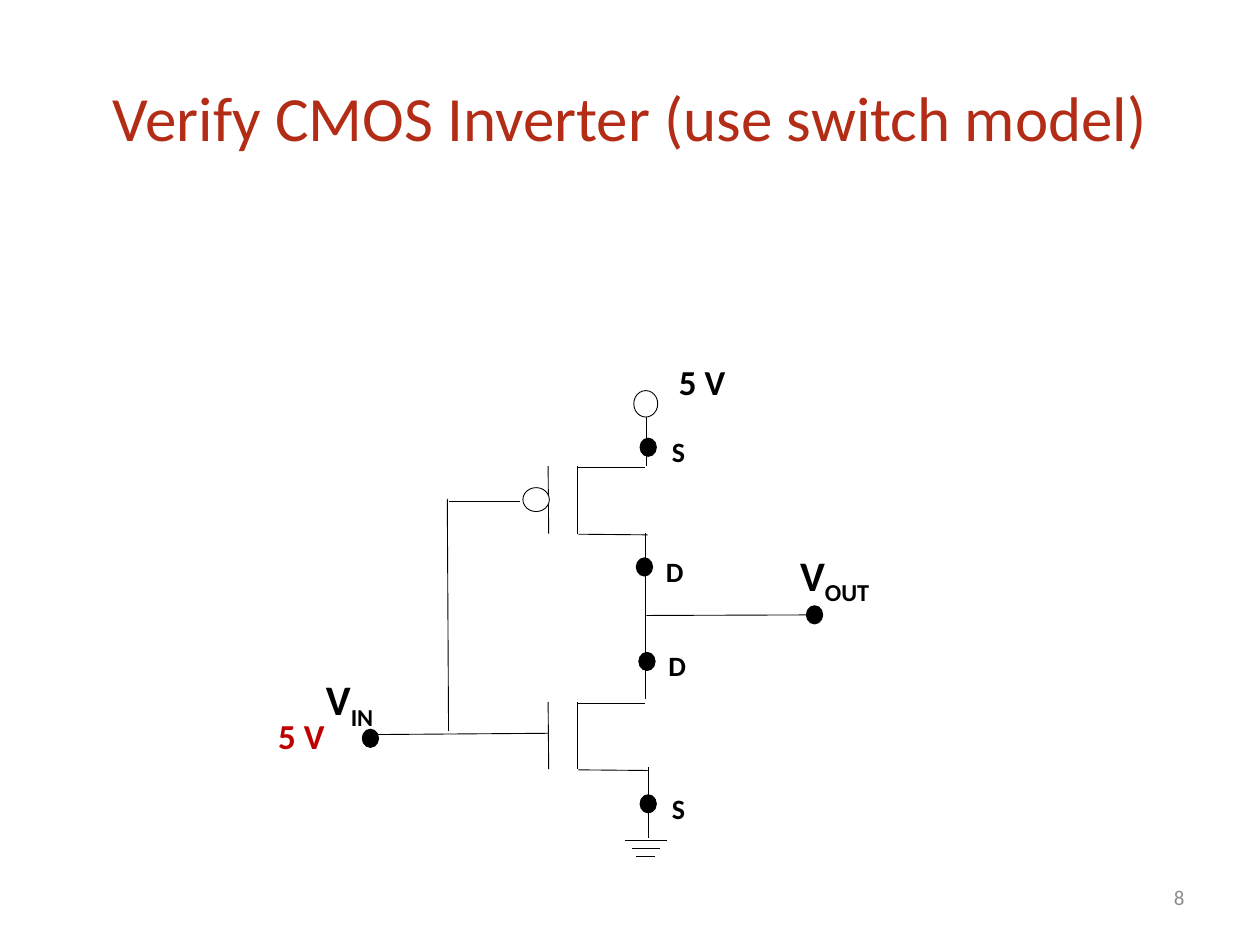
from dataclasses import dataclass

from lxml.etree import SubElement
from pptx import Presentation
from pptx.dml.color import RGBColor
from pptx.enum.shapes import MSO_CONNECTOR, MSO_SHAPE
from pptx.enum.text import MSO_ANCHOR, PP_ALIGN
from pptx.oxml.ns import qn
from pptx.util import Inches, Pt


@dataclass(frozen=True)
class Theme:
    font: str = "Calibri"
    ink: str = "000000"
    paper: str = "FFFFFF"
    title: str = "B32C16"
    accent: str = "C00000"
    muted: str = "8C8C8C"
    title_size: int = 36
    port_size: int = 24
    volt_size: int = 20
    pin_size: int = 16
    number_size: int = 12
    line_width: float = 0.5


THEME = Theme()
COLS, ROWS = 100, 75
CELL = Inches(10) / COLS


def grid(*cells):
    return [round(c * CELL) for c in cells]


def add_text(s, box, runs, size, color=THEME.ink, bold=False,
             align=PP_ALIGN.CENTER, anchor=MSO_ANCHOR.TOP):
    tf = s.shapes.add_textbox(*grid(*box)).text_frame
    tf.word_wrap = True
    tf.vertical_anchor = anchor
    p = tf.paragraphs[0]
    p.alignment = align
    p.font.name = THEME.font
    p.font.size = Pt(size)
    p.font.bold = bold
    p.font.color.rgb = RGBColor.from_string(color)
    for text, baseline in runs:
        r = p.add_run()
        r.text = text
        if baseline:
            r._r.get_or_add_rPr().set("baseline", str(baseline * 1000))


def add_wire(s, x1, y1, x2, y2):
    line = s.shapes.add_connector(MSO_CONNECTOR.STRAIGHT, *grid(x1, y1, x2, y2))
    line.line.color.rgb = RGBColor.from_string(THEME.ink)
    line.line.width = Pt(THEME.line_width)
    SubElement(line._element.spPr, qn("a:effectLst"))


def add_circle(s, cx, cy, w, h, fill):
    box = grid(cx - w / 2, cy - h / 2, w, h)
    sp = s.shapes.add_shape(MSO_SHAPE.OVAL, *box)
    sp.shadow.inherit = False
    sp.fill.solid()
    sp.fill.fore_color.rgb = RGBColor.from_string(fill)
    sp.line.color.rgb = RGBColor.from_string(THEME.ink)
    sp.line.width = Pt(THEME.line_width)


def add_node(s, cx, cy):
    add_circle(s, cx, cy, 1.3, 1.45, THEME.ink)


def add_pin(s, cx, cy, name):
    add_node(s, cx, cy)
    add_text(s, (cx - 1.8, cy - 1.5, 8.4, 3.7), [(name, 0)],
             THEME.pin_size, bold=True)


def add_port(s, cx, cy, name, left, top):
    add_node(s, cx, cy)
    add_text(s, (left, top, 11.3, 5), [("V", 0), (name, -25)],
             THEME.port_size, bold=True)


def add_voltage(s, box, color):
    add_text(s, box, [("5 V", 0)], THEME.volt_size, color, True, PP_ALIGN.LEFT)


def add_transistor(s, top):
    bottom = top + 5.35
    add_wire(s, 43.5, top, 43.55, bottom)
    add_wire(s, 45.8, top, 45.8, bottom)
    add_wire(s, 45.8, top + 0.1, 51.2, top + 0.1)
    add_wire(s, 45.9, bottom + 0.05, 51.4, bottom + 0.1)


def add_ground(s, cx, top):
    for i, width in enumerate((3.3, 2.2, 1.5)):
        y = top + 0.65 * i
        add_wire(s, cx - width / 2, y, cx + width / 2, y)


def add_circuit(s):
    for top in (37, 55.7):
        add_transistor(s, top)
    for wire in (
        (51.3, 37, 51.3, 32.6),
        (51.2, 55.5, 51.2, 42.3),
        (51.5, 60.9, 51.5, 66.5),
        (65.2, 48.8, 51.3, 48.85),
        (43.5, 58.2, 29.6, 58.3),
        (35.6, 58, 35.5, 39.6),
        (41.3, 39.8, 35.6, 39.8),
    ):
        add_wire(s, *wire)
    add_ground(s, 51.25, 66.7)
    add_circle(s, 51.25, 32.05, 1.9, 2.1, THEME.paper)
    add_circle(s, 42.55, 39.65, 2.1, 1.9, THEME.paper)
    for cx, cy, name in ((51.45, 35.5, "S"), (51.15, 45, "D"),
                         (51.35, 52.5, "D"), (51.45, 63.8, "S")):
        add_pin(s, cx, cy, name)
    add_port(s, 64.65, 48.8, "OUT", 60.6, 43.1)
    add_port(s, 29.4, 58.6, "IN", 22.1, 53)
    add_voltage(s, (52.9, 28.1, 41, 4.4), THEME.ink)
    add_voltage(s, (21.1, 56.2, 7.6, 4.4), THEME.accent)


def main():
    prs = Presentation()
    prs.slide_width, prs.slide_height = grid(COLS, ROWS)
    s = prs.slides.add_slide(prs.slide_layouts[6])
    add_text(s, (5, 3, 90, 12.5), [("Verify CMOS Inverter (use switch model)", 0)],
             THEME.title_size, THEME.title, anchor=MSO_ANCHOR.MIDDLE)
    add_circuit(s)
    add_text(s, (71.7, 69.2, 23.3, 4), [("8", 0)], THEME.number_size, THEME.muted,
             align=PP_ALIGN.RIGHT, anchor=MSO_ANCHOR.MIDDLE)
    prs.save("out.pptx")


if __name__ == "__main__":
    main()
